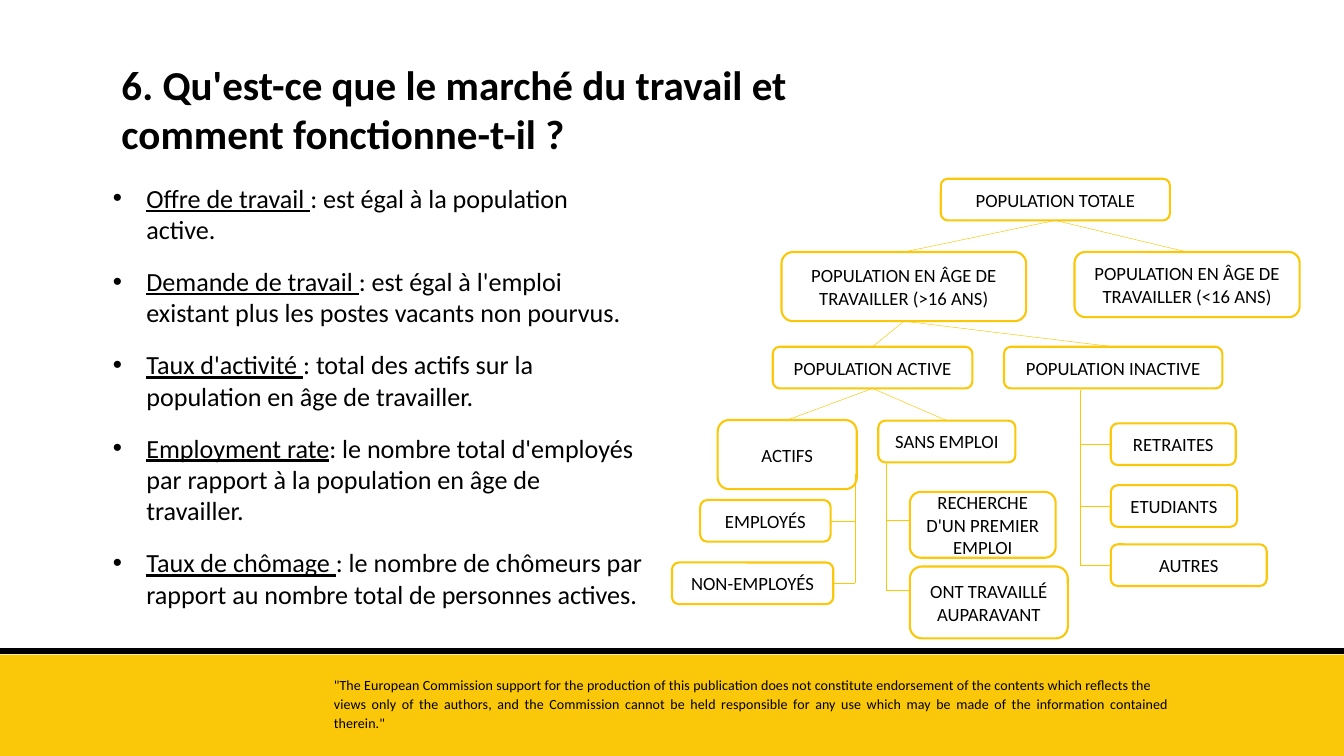
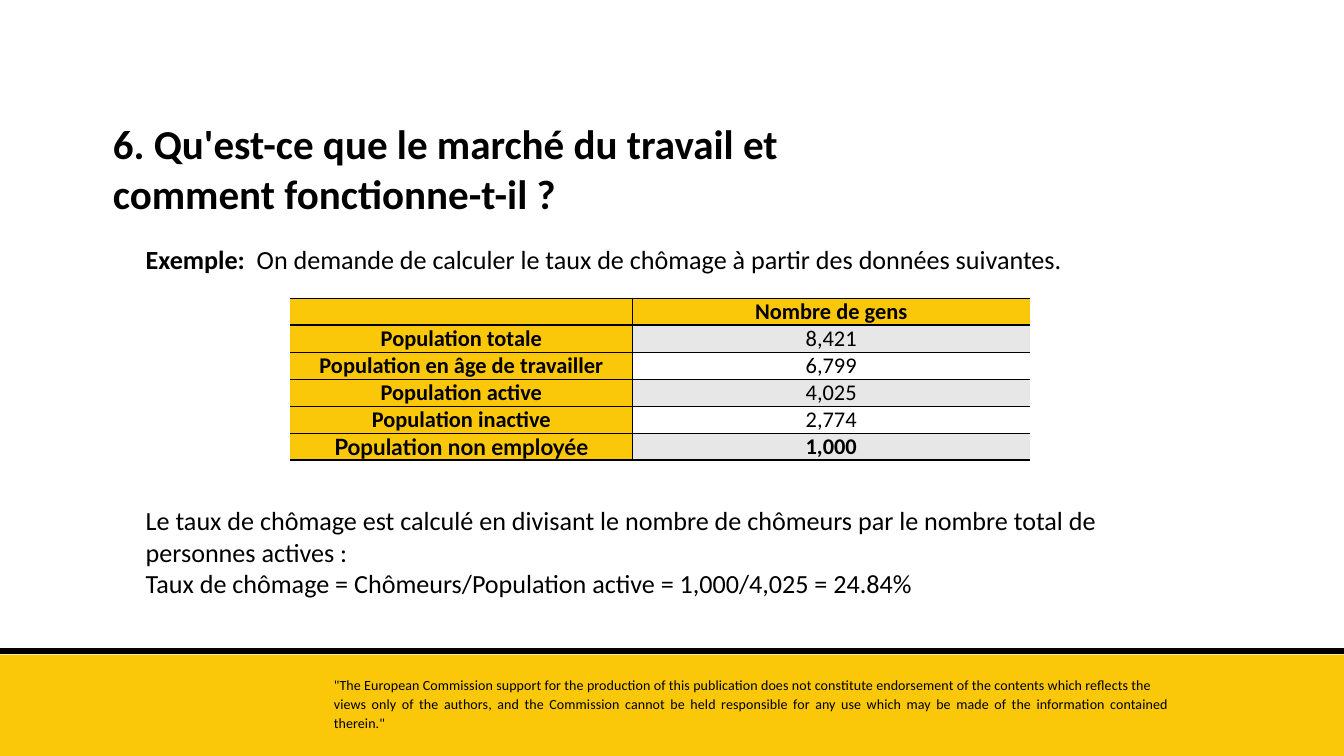
from lxml import etree
from pptx import Presentation
from pptx.dml import color
from pptx.enum import shapes, text
from pptx.oxml import ns
from pptx.util import Inches, Pt

COLORS = {"gold": "FAC709", "black": "000000", "white": "FFFFFF", "grey": "E7E7E7"}
BODY = {"name": "Calibri", "size": Pt(28)}
TITLE = {**BODY, "size": Pt(44), "bold": True}
NODE = {**BODY, "size": Pt(20)}
FOOTER = {**BODY, "size": Pt(15)}
CELL = {**BODY, "size": Pt(24)}
TITLE_TEXT = "6. Qu'est-ce que le marché du travail et comment fonctionne-t-il ?"

FOOTER_TEXT = [
    ("\"The European Commission support for the production of this publication does not "
     "constitute endorsement of the contents which reflects the", Pt(16.1)),
    ("views only of the authors, and the Commission cannot be held responsible for any use "
     "which may be made of the information contained therein.\"", 1.13),
]

DEFINITIONS = [
    ("Offre de travail ", ": est égal à la population active."),
    ("Demande de travail ",
     ": est égal à l'emploi existant plus les postes vacants non pourvus."),
    ("Taux d'activité ", ": total des actifs sur la population en âge de travailler."),
    ("Employment rate",
     ": le nombre total d'employés par rapport à la population en âge de travailler."),
    ("Taux de chômage ",
     ": le nombre de chômeurs par rapport au nombre total de personnes actives."),
]

# Population tree: key -> label, left, top, width, height within the diagram box
NODES = {
    "total": ("POPULATION TOTALE", 4, 0, 3.41, 0.62),
    "over16": ("POPULATION EN ÂGE DE TRAVAILLER (>16 ANS)", 1.63, 1.09, 3.64, 1.03),
    "under16": ("POPULATION EN ÂGE DE TRAVAILLER (<16 ANS)", 5.99, 1.09, 3.35, 0.97),
    "active": ("POPULATION ACTIVE", 1.5, 2.5, 2.97, 0.62),
    "inactive": ("POPULATION INACTIVE", 4.94, 2.5, 3.25, 0.62),
    "working": ("ACTIFS", 0.68, 3.59, 2.07, 1.03),
    "jobless": ("SANS EMPLOI", 3.07, 3.6, 2.04, 0.62),
    "employee": ("EMPLOYÉS", 0.42, 4.78, 1.94, 0.62),
    "self": ("NON-EMPLOYÉS", 0, 5.71, 2.4, 0.62),
    "first_job": ("RECHERCHE D'UN PREMIER EMPLOI", 3.54, 4.66, 2.17, 0.98),
    "worked": ("ONT TRAVAILLÉ AUPARAVANT", 3.54, 5.77, 2.35, 1.07),
    "retired": ("RETRAITES", 6.53, 3.64, 1.86, 0.62),
    "students": ("ETUDIANTS", 6.53, 4.56, 1.88, 0.62),
    "others": ("AUTRES", 6.53, 5.44, 2.32, 0.62),
}
UNFILLED = {"active", "jobless"}
FORKS = {
    "total": ("over16", "under16"),
    "over16": ("active", "inactive"),
    "active": ("working", "jobless"),
}
# Vertical spines: left, top, side of the children, {child: offset from its middle}
SPINES = [
    (6.07, 3.14, 1, {"retired": 0, "students": 0, "others": 0}),
    (2.73, 4.4, 3, {"employee": 0, "self": 0}),
    (3.19, 4.21, 1, {"first_job": -0.07, "worked": -0.18}),
]

TABLE_ROWS = [
    ("", "Nombre de gens"),
    ("Population totale", "8,421"),
    ("Population en âge de travailler", "6,799"),
    ("Population active", "4,025"),
    ("Population inactive", "2,774"),
    ("Population non employée", "1,000"),
]


def rgb(name):
    return color.RGBColor.from_string(COLORS[name])


def add_run(p, content, fmt):
    r = p.add_run()
    r.text = content
    for key, value in fmt.items():
        setattr(r.font, key, value)
    r.font.color.rgb = rgb("black")
    return r


def add_text(slide, box, paragraphs):
    """Each paragraph is a list of (text, format) runs."""
    sp = slide.shapes.add_textbox(*map(Inches, box))
    tf = sp.text_frame
    tf.word_wrap = True
    tf.auto_size = text.MSO_AUTO_SIZE.SHAPE_TO_FIT_TEXT
    for i, runs in enumerate(paragraphs):
        p = tf.paragraphs[0] if i == 0 else tf.add_paragraph()
        for content, fmt in runs:
            add_run(p, content, fmt)
    return tf


def add_box(slide, kind, box, fill=None, line=None):
    sp = slide.shapes.add_shape(kind, *map(Inches, box))
    sp.shadow.inherit = False
    if fill:
        sp.fill.solid()
        sp.fill.fore_color.rgb = rgb(fill)
    else:
        sp.fill.background()
    if line:
        sp.line.color.rgb = rgb(line)
        sp.line.width = Pt(2.25)
    else:
        sp.line.fill.background()
    return sp


def add_line(slide, x1, y1, x2, y2, col="gold", width=0.5):
    cx = slide.shapes.add_connector(
        shapes.MSO_CONNECTOR.STRAIGHT, *map(Inches, (x1, y1, x2, y2)))
    cx.line.color.rgb = rgb(col)
    cx.line.width = Pt(width)
    etree.SubElement(cx._element.spPr, ns.qn("a:effectLst"))
    return cx


def add_footer(slide, left, top, width, height):
    # Gold band with a black rule along its top
    add_box(slide, shapes.MSO_SHAPE.RECTANGLE, (left, top, width, height), "gold")
    add_line(slide, left, top - 0.05, left + width, top - 0.05, "black", 6.75)
    # Disclaimer
    tf = add_text(slide, (left + 4.87, top + 0.3, 12.63, 0.88),
                  [[(line, FOOTER)] for line, _ in FOOTER_TEXT])
    for p, (_, spacing) in zip(tf.paragraphs, FOOTER_TEXT):
        p.alignment = text.PP_ALIGN.JUSTIFY
        p.line_spacing = spacing
        p.runs[0]._r.get_or_add_rPr().set("spc", "10")


def add_frame(prs, title_left, title_top):
    slide = prs.slides.add_slide(prs.slide_layouts[6])
    add_footer(slide, 0, 9.74, 20, 1.51)
    add_text(slide, (title_left, title_top, 11, 1.58), [[(TITLE_TEXT, TITLE)]])
    return slide


def add_definitions(slide, box):
    tf = add_text(slide, box, [[(term, {**BODY, "underline": True}), (meaning, BODY)]
                               for term, meaning in DEFINITIONS])
    for i, p in enumerate(tf.paragraphs):
        pPr = p._p.get_or_add_pPr()
        pPr.set("marL", str(Inches(0.5)))
        pPr.set("indent", str(-Inches(0.5)))
        etree.SubElement(pPr, ns.qn("a:buFont")).set("typeface", "Arial")
        etree.SubElement(pPr, ns.qn("a:buChar")).set("char", "•")
        if i:
            p.space_before = Pt(22)


def add_population_tree(slide, left, top):
    # Boxes
    nodes = {}
    for key, (label, x, y, w, h) in NODES.items():
        sp = add_box(slide, shapes.MSO_SHAPE.ROUNDED_RECTANGLE, (left + x, top + y, w, h),
                     None if key in UNFILLED else "white", "gold")
        tf = sp.text_frame
        tf.word_wrap = True
        tf.vertical_anchor = text.MSO_ANCHOR.MIDDLE
        tf.paragraphs[0].alignment = text.PP_ALIGN.CENTER
        add_run(tf.paragraphs[0], label, NODE)
        nodes[key] = sp

    # Slanted links from a parent to its children
    for parent, children in FORKS.items():
        for child in children:
            cx = add_line(slide, left, top, left, top)
            cx.begin_connect(nodes[parent], 2)
            cx.end_connect(nodes[child], 0)

    # Spines with a short branch to each child
    for x, start, side, children in SPINES:
        for child, offset in children.items():
            _, cx_left, cy, w, h = NODES[child]
            edge = cx_left + (w if side == 3 else 0)
            y = cy + h / 2 + offset
            cx = add_line(slide, left + edge, top + y, left + x, top + y)
            if not offset:
                cx.begin_connect(nodes[child], side)
        add_line(slide, left + x, top + start, left + x, top + y)


def set_border(cell, side, width):
    ln = etree.SubElement(cell._tc.get_or_add_tcPr(), ns.qn(f"a:ln{side}"))
    if not width:
        etree.SubElement(ln, ns.qn("a:noFill"))
        return
    ln.set("w", str(Pt(width)))
    fill = etree.SubElement(ln, ns.qn("a:solidFill"))
    etree.SubElement(fill, ns.qn("a:srgbClr")).set("val", COLORS["black"])


def add_population_table(slide, left, top):
    widths, row_height, last = (5.09, 5.92), 0.4, len(TABLE_ROWS) - 1
    table = slide.shapes.add_table(
        len(TABLE_ROWS), len(widths), Inches(left), Inches(top),
        Inches(sum(widths)), Inches(row_height * len(TABLE_ROWS))).table
    table.first_row = table.horz_banding = False
    for column, width in zip(table.columns, widths):
        column.width = Inches(width)

    margins = {"margin_left": 0.05, "margin_right": 0.05, "margin_top": 0, "margin_bottom": 0}
    for i, row in enumerate(TABLE_ROWS):
        for j, content in enumerate(row):
            cell = table.cell(i, j)
            for key, value in margins.items():
                setattr(cell, key, Inches(value))
            cell.vertical_anchor = text.MSO_ANCHOR.BOTTOM
            # Heavy rules around the header and at the foot, thin ones elsewhere
            borders = {"L": j, "R": 1 - j, "T": 2 if i < 2 else 1,
                       "B": 2 if i in (0, last) else 1}
            for side, width in borders.items():
                set_border(cell, side, width)
            cell.fill.solid()
            header = i == 0 or j == 0
            cell.fill.fore_color.rgb = rgb("gold" if header else "grey" if i % 2 else "white")
            if content:
                p = cell.text_frame.paragraphs[0]
                p.alignment = text.PP_ALIGN.CENTER
                font = "Lato" if (i, j) == (last, 0) else "Calibri"
                add_run(p, content, {**CELL, "name": font, "bold": header or i == last})


def build_definitions_slide(prs):
    slide = add_frame(prs, 1.71, 0.83)
    add_definitions(slide, (1.58, 2.66, 8.08, 7.44))
    add_population_tree(slide, 10, 2.66)


def build_example_slide(prs):
    slide = add_frame(prs, 1.58, 1.72)
    add_text(slide, (2.07, 3.58, 15.51, 0.57), [[
        ("Exemple: ", {**BODY, "bold": True}),
        (" On demande de calculer le taux de chômage à partir des données suivantes.", BODY)]])
    add_population_table(slide, 4.32, 4.44)
    add_text(slide, (2.07, 7.46, 15.68, 1.51), [
        [("Le taux de chômage est calculé en divisant le nombre de chômeurs par le nombre "
          "total de personnes actives :", BODY)],
        [("Taux de chômage = Chômeurs/Population active = 1,000/4,025 = 24.84%", BODY)]])


def main():
    prs = Presentation()
    prs.slide_width, prs.slide_height = Inches(20), Inches(11.25)
    build_definitions_slide(prs)
    build_example_slide(prs)
    prs.save("out.pptx")


if __name__ == "__main__":
    main()
